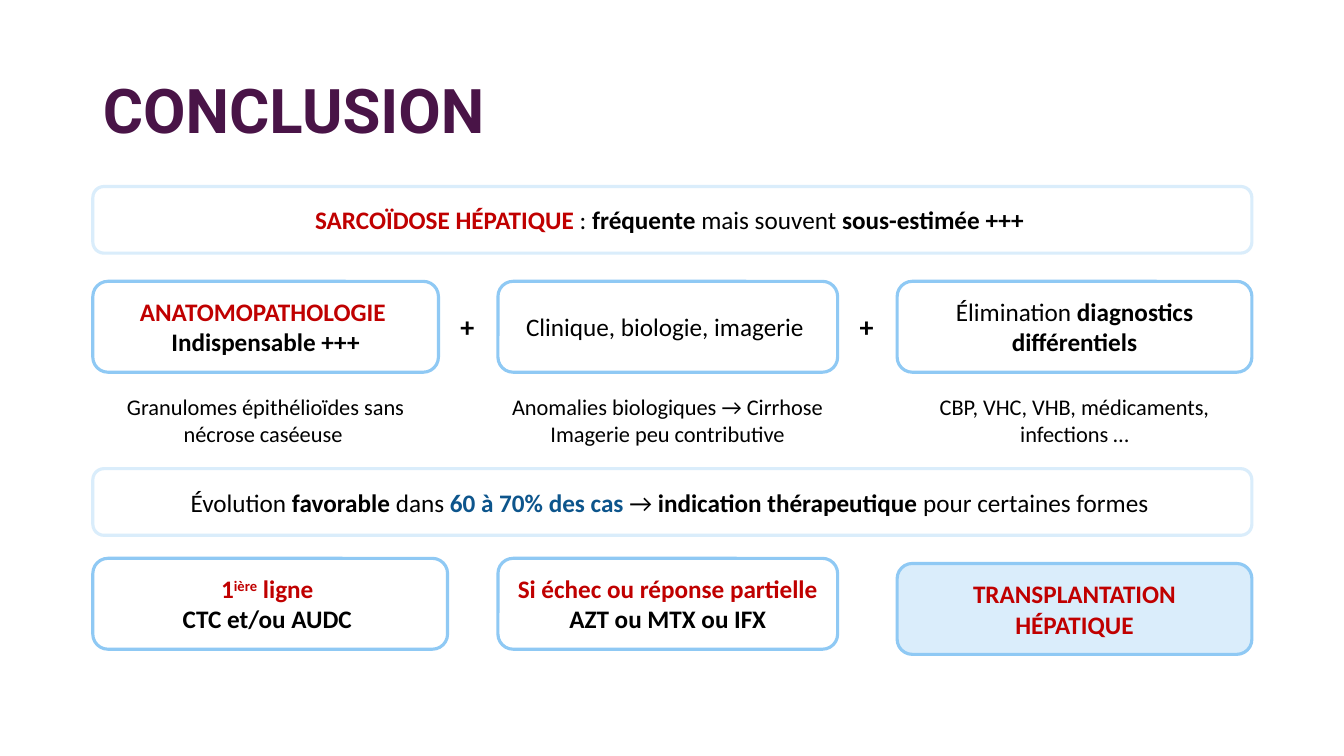
from pptx import Presentation
from pptx.dml.color import RGBColor
from pptx.enum.shapes import MSO_SHAPE
from pptx.enum.text import MSO_ANCHOR, MSO_AUTO_SIZE, PP_ALIGN
from pptx.util import Cm, Pt

ROUNDED = MSO_SHAPE.ROUNDED_RECTANGLE
MIDDLE = MSO_ANCHOR.MIDDLE
NO_FIT, GROW = MSO_AUTO_SIZE.NONE, MSO_AUTO_SIZE.SHAPE_TO_FIT_TEXT
LEFT, CENTER = PP_ALIGN.LEFT, PP_ALIGN.CENTER

PLUM, RED, NAVY, BLACK = "491447", "C00000", "0D558C", "000000"
SKY, PALE = "8FC9F4", "DAEDFB"

MARGIN, FULL_WIDTH = 2.34, 29.21
BANNER_HEIGHT, CARD_HEIGHT = 1.68, 2.29
COLUMN_LEFTS = (MARGIN, 12.55, 22.61)
BOLD = {"bold": True}
RED_BOLD = {"bold": True, "color": RED}


def rgb(value):
    return RGBColor.from_string(value)


def add_run(p, text, size=18, font="Calibri", color=BLACK, bold=False, superscript=False):
    r = p.add_run()
    r.text = text
    r.font.size = Pt(size)
    r.font.name = font
    r.font.bold = bold
    r.font.color.rgb = rgb(color)
    if superscript:
        r._r.get_or_add_rPr().set("baseline", "30000")


def write(tf, paragraphs, align=CENTER, **style):
    """Fill a frame with paragraphs, each a list of (text, format) runs."""
    for i, runs in enumerate(paragraphs):
        p = tf.paragraphs[0] if i == 0 else tf.add_paragraph()
        p.alignment = align
        for text, own in runs:
            add_run(p, text, **{**style, **own})


def add_title(slide, text):
    sp = slide.shapes.title
    sp.left, sp.top, sp.width, sp.height = Cm(MARGIN), Cm(1.02), Cm(FULL_WIDTH), Cm(3.68)
    tf = sp.text_frame
    tf.auto_size = NO_FIT
    tf.vertical_anchor = MIDDLE
    write(tf, [[(text, {})]], align=LEFT, size=44, font="Roboto", color=PLUM, bold=True)
    tf.paragraphs[0].line_spacing = 0.9


def add_box(slide, left, top, width, height, paragraphs, line=SKY, fill=None):
    sp = slide.shapes.add_shape(ROUNDED, Cm(left), Cm(top), Cm(width), Cm(height))
    sp.shadow.inherit = False
    if fill:
        sp.fill.solid()
        sp.fill.fore_color.rgb = rgb(fill)
    else:
        sp.fill.background()
    sp.line.color.rgb = rgb(line)
    sp.line.width = Pt(2.25)
    tf = sp.text_frame
    tf.word_wrap = True
    tf.vertical_anchor = MIDDLE
    write(tf, paragraphs)


def add_banner(slide, top, runs):
    add_box(slide, MARGIN, top, FULL_WIDTH, BANNER_HEIGHT, [runs], line=PALE)


def add_label(slide, left, top, width, height, paragraphs, wrap=True, **style):
    sp = slide.shapes.add_textbox(Cm(left), Cm(top), Cm(width), Cm(height))
    tf = sp.text_frame
    tf.word_wrap = wrap
    tf.auto_size = GROW
    write(tf, paragraphs, **style)


def main():
    prs = Presentation()
    prs.slide_width, prs.slide_height = Cm(33.87), Cm(19.05)
    slide = prs.slides.add_slide(prs.slide_layouts[5])
    add_title(slide, "CONCLUSION")

    add_banner(slide, 4.7, [
        ("SARCOÏDOSE HÉPATIQUE ", RED_BOLD), (": ", {}), ("fréquente", BOLD),
        (" mais souvent ", {}), ("sous-estimée +++ ", BOLD)])
    add_banner(slide, 11.81, [
        ("Évolution ", {}), ("favorable", BOLD), (" dans ", {}),
        ("60 à 70% des cas ", {"bold": True, "color": NAVY}), ("→ ", {}),
        ("indication thérapeutique ", BOLD), ("pour certaines formes ", {})])

    diagnosis = [
        (8.71, [[("ANATOMOPATHOLOGIE ", RED_BOLD)], [("Indispensable +++", BOLD)]]),
        (8.56, [[("Clinique, biologie, imagerie ", {})]]),
        (8.94, [[("Élimination ", {}), ("diagnostics différentiels", BOLD)]]),
    ]
    for left, (width, paragraphs) in zip(COLUMN_LEFTS, diagnosis):
        add_box(slide, left, 7.09, width, CARD_HEIGHT, paragraphs)

    for left in (11.35, 21.41):
        add_label(slide, left, 7.67, 0.86, 1.12, [[("+", BOLD)]], wrap=False, size=20)

    details = [
        (MARGIN, 8.71, ["Granulomes épithélioïdes sans nécrose caséeuse "]),
        (11.91, 9.83, ["Anomalies biologiques → Cirrhose", "Imagerie peu contributive"]),
        (22.61, 8.94, ["CBP, VHC, VHB, médicaments, infections …"]),
    ]
    for left, width, lines in details:
        add_label(slide, left, 9.78, width, 1.63, [[(text, {})] for text in lines], size=16)

    treatments = [
        (14.07, 8.94, None, [
            [("1", RED_BOLD), ("ière", {**RED_BOLD, "superscript": True}), (" ligne ", RED_BOLD)],
            [("CTC et/ou AUDC ", BOLD)]]),
        (14.07, 8.56, None, [
            [("Si échec ou réponse partielle", RED_BOLD)], [("AZT ou MTX ou IFX", BOLD)]]),
        (14.2, 8.94, PALE, [[("TRANSPLANTATION HÉPATIQUE", RED_BOLD)]]),
    ]
    for left, (top, width, fill, paragraphs) in zip(COLUMN_LEFTS, treatments):
        add_box(slide, left, top, width, CARD_HEIGHT, paragraphs, fill=fill)

    prs.save("out.pptx")


if __name__ == "__main__":
    main()
